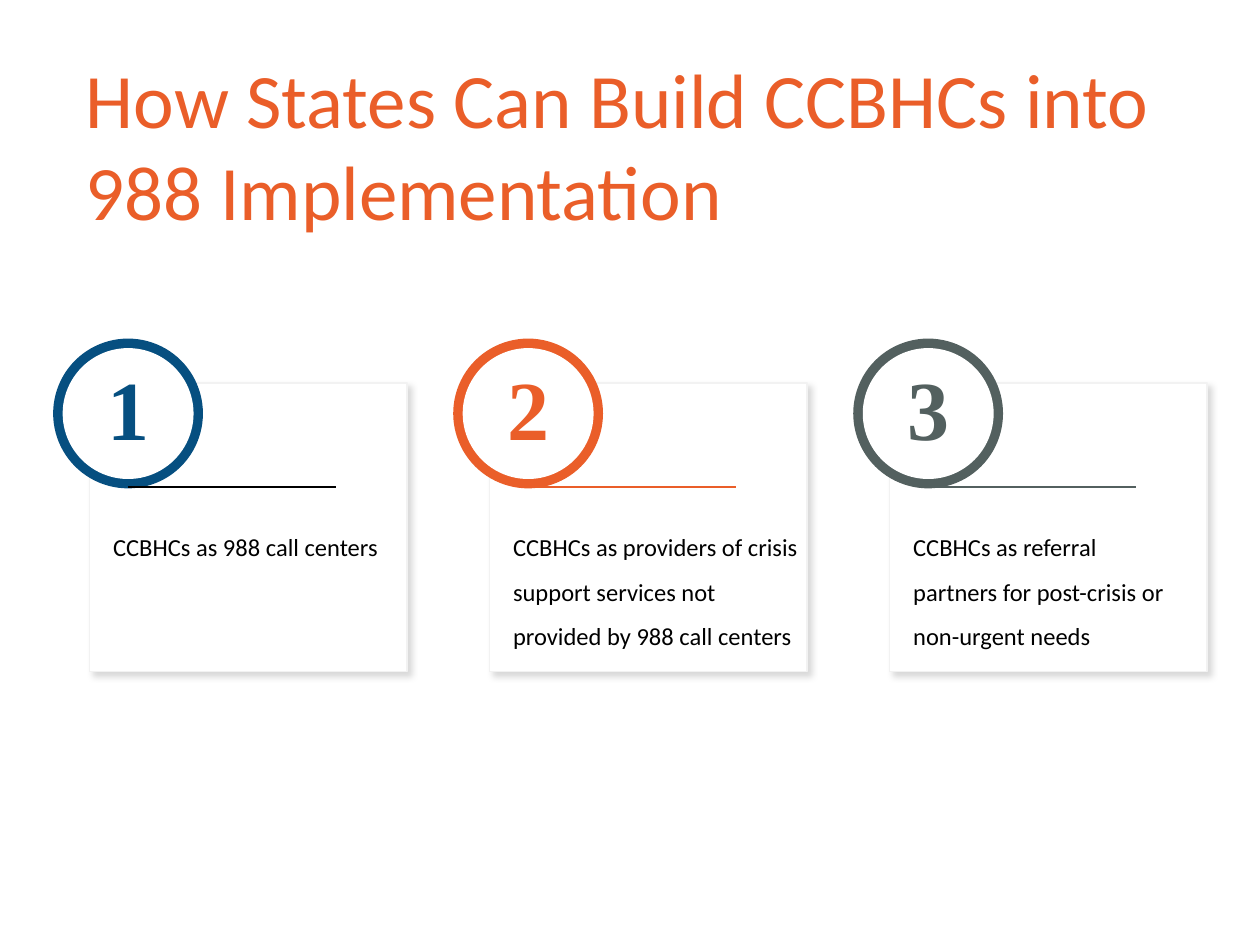
from lxml.etree import SubElement
from pptx import Presentation
from pptx.dml.color import RGBColor
from pptx.enum.shapes import MSO_CONNECTOR, MSO_SHAPE
from pptx.enum.text import MSO_ANCHOR, MSO_AUTO_SIZE, PP_ALIGN
from pptx.oxml.ns import qn
from pptx.util import Pt

ORANGE, WHITE, BLACK = "EA5E29", "FFFFFF", "000000"
CARD_LEFT, CARD_TOP, CARD_STEP = 51.1, 218.9, 228.6
CARD_WIDTH, CARD_HEIGHT = 181.4, 164.9

# number, accent colour, rule colour, wording, text width, text height
CARDS = [
    ("1", "064F80", BLACK, "CCBHCs as 988 call centers", 154.8, 49),
    ("2", ORANGE, ORANGE,
     "CCBHCs as providers of crisis support services not provided by 988 call centers",
     167.8, 99.4),
    ("3", "53605F", "53605F",
     "CCBHCs as referral partners for post-crisis or non-urgent needs", 154.8, 99.4),
]


def color(hex_code):
    return RGBColor.from_string(hex_code)


def style_text(para, size, font_name, hex_code, bold=False):
    font = para.runs[0].font
    font.size, font.name, font.bold = Pt(size), font_name, bold
    font.color.rgb = color(hex_code)


def set_insets(frame, horizontal, vertical):
    frame.margin_left = frame.margin_right = Pt(horizontal)
    frame.margin_top = frame.margin_bottom = Pt(vertical)


def add_filled(shapes, kind, left, top, width, height, fill):
    shape = shapes.add_shape(kind, Pt(left), Pt(top), Pt(width), Pt(height))
    shape.shadow.inherit = False
    shape.fill.solid()
    shape.fill.fore_color.rgb = color(fill)
    shape.line.fill.background()
    return shape


def add_soft_shadow(shape):
    effects = shape._element.spPr.find(qn("a:effectLst"))
    shadow = SubElement(effects, qn("a:outerShdw"), blurRad=str(Pt(4)), dist=str(Pt(3)),
                        dir=str(45 * 60000), algn="tl", rotWithShape="0")
    tint = SubElement(shadow, qn("a:srgbClr"), val=BLACK)
    SubElement(tint, qn("a:alpha"), val="14000")


def add_title(page, left, top, width, height):
    box = page.shapes.add_textbox(Pt(left), Pt(top), Pt(width), Pt(height))
    frame = box.text_frame
    frame.word_wrap = True
    frame.vertical_anchor = MSO_ANCHOR.MIDDLE
    frame.text = "How States Can Build CCBHCs into 988 Implementation"
    style_text(frame.paragraphs[0], 44, "Calibri", ORANGE)


def add_badge(page, left, top, size, number, accent):
    """Place a ring with a number inside it, as one group."""
    ring_width = 5.4
    face_size = size - 2 * ring_width
    group = page.shapes.add_group_shape()
    add_filled(group.shapes, MSO_SHAPE.OVAL, left, top, size, size, accent)
    face = add_filled(group.shapes, MSO_SHAPE.OVAL, left + ring_width, top + ring_width,
                      face_size, face_size, WHITE)
    frame = face.text_frame
    set_insets(frame, 13.7, 9.4)
    frame.vertical_anchor = MSO_ANCHOR.MIDDLE
    frame.text = number
    para = frame.paragraphs[0]
    para.alignment = PP_ALIGN.CENTER
    para.line_spacing = 0.9
    style_text(para, 48, "Times New Roman", accent, bold=True)


def add_rule(page, left, top, width, hex_code):
    rule = page.shapes.add_connector(MSO_CONNECTOR.STRAIGHT, Pt(left), Pt(top),
                                     Pt(left + width), Pt(top))
    rule.line.color.rgb = color(hex_code)
    rule.line.width = Pt(1)
    SubElement(rule._element.spPr, qn("a:effectLst"))


def add_body(page, left, top, width, height, wording):
    box = page.shapes.add_textbox(Pt(left), Pt(top), Pt(width), Pt(height))
    frame = box.text_frame
    frame.word_wrap = True
    frame.auto_size = MSO_AUTO_SIZE.SHAPE_TO_FIT_TEXT
    set_insets(frame, 0, 3.6)
    frame.text = wording
    para = frame.paragraphs[0]
    para.line_spacing = 1.5
    style_text(para, 14, "Calibri", BLACK)


def add_card(page, left, top, width, height, content):
    number, accent, rule_color, wording, text_width, text_height = content
    panel = add_filled(page.shapes, MSO_SHAPE.RECTANGLE, left, top, width, height, WHITE)
    panel.line.color.rgb = color("F2F2F2")
    panel.line.width = Pt(1)
    add_soft_shadow(panel)
    add_badge(page, left - 20.7, top - 25.4, 85.6, number, accent)
    add_body(page, left + 13.5, top + 73.4, text_width, text_height, wording)
    add_rule(page, left + 22.2, top + 59.6, 118.8, rule_color)


def main():
    deck = Presentation()
    deck.slide_width, deck.slide_height = Pt(720), Pt(540)
    page = deck.slides.add_slide(deck.slide_layouts[6])
    add_title(page, 42, 28.8, 637, 106.5)
    for index, content in enumerate(CARDS):
        add_card(page, CARD_LEFT + index * CARD_STEP, CARD_TOP,
                 CARD_WIDTH, CARD_HEIGHT, content)
    deck.save("out.pptx")


if __name__ == "__main__":
    main()
